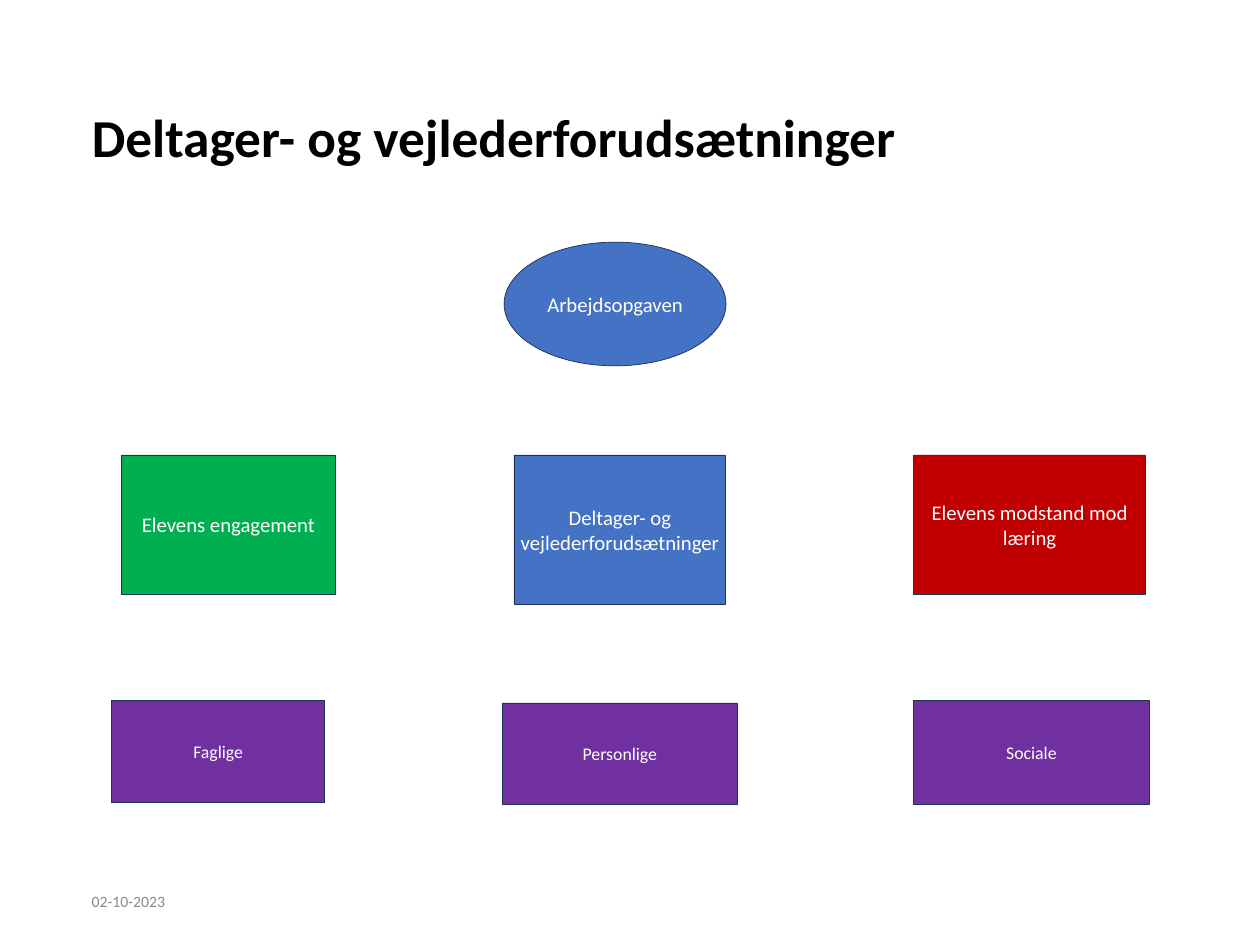
from pptx import Presentation
from pptx import util as u
from pptx.dml.color import RGBColor
from pptx.enum import shapes, text

WIDTH, HEIGHT = 23.62, 17.72
MARGIN = 1.62
# Left edges of the outer columns; the middle column is centred on its axis
LEFT, RIGHT = 2.28, 17.13
MIDDLE_AXIS = 11.62
# Top edges of the rows
TASK_ROW, PUPIL_ROW, SKILL_ROW = 4.54, 8.53, 13.14

BLUE, GREEN, RED, PURPLE = "4472C4", "00B050", "C00000", "7030A0"
OUTLINE, WHITE, BLACK, GREY = "1E3256", "FFFFFF", "000000", "898989"


def colour(hex_code):
    return RGBColor.from_string(hex_code)


def write(shape, words, size, hex_code, anchor, align, bold=False):
    frame = shape.text_frame
    frame.text = words
    frame.word_wrap = True
    frame.auto_size = text.MSO_AUTO_SIZE.NONE
    frame.vertical_anchor = anchor
    paragraph = frame.paragraphs[0]
    paragraph.alignment = align
    font = paragraph.font
    font.name, font.size, font.bold = "Calibri", u.Pt(size), bold
    font.color.rgb = colour(hex_code)
    return paragraph


def add_title(slide, words):
    title = slide.shapes.title
    title.left, title.top = u.Inches(MARGIN), u.Inches(2.03)
    title.width, title.height = u.Inches(WIDTH - 2 * MARGIN), u.Inches(1.59)
    paragraph = write(title, words, 72, BLACK, text.MSO_ANCHOR.TOP,
                      text.PP_ALIGN.LEFT, bold=True)
    paragraph.line_spacing = 0.9


def add_date(slide, words):
    box = slide.shapes.add_textbox(u.Inches(MARGIN), u.Inches(16.42),
                                   u.Inches(5.31), u.Inches(0.94))
    write(box, words, 21.3, GREY, text.MSO_ANCHOR.MIDDLE, text.PP_ALIGN.LEFT)


def add_node(slide, words, left, top, width, height, fill, size=28,
             kind=shapes.MSO_SHAPE.RECTANGLE):
    node = slide.shapes.add_shape(kind, u.Inches(left), u.Inches(top),
                                  u.Inches(width), u.Inches(height))
    node.shadow.inherit = False
    node.fill.solid()
    node.fill.fore_color.rgb = colour(fill)
    node.line.color.rgb = colour(OUTLINE)
    node.line.width = u.Pt(1)
    write(node, words, size, WHITE, text.MSO_ANCHOR.MIDDLE,
          text.PP_ALIGN.CENTER)


def centred(width):
    return MIDDLE_AXIS - width / 2


def main():
    presentation = Presentation()
    presentation.slide_width = u.Inches(WIDTH)
    presentation.slide_height = u.Inches(HEIGHT)
    slide = presentation.slides.add_slide(presentation.slide_layouts[5])

    add_title(slide, "Deltager- og vejlederforudsætninger")

    # The task
    add_node(slide, "Arbejdsopgaven", 9.45, TASK_ROW, 4.16, 2.32, BLUE,
             kind=shapes.MSO_SHAPE.OVAL)

    # Engagement, prerequisites and resistance
    add_node(slide, "Elevens engagement", LEFT, PUPIL_ROW, 4, 2.61, GREEN)
    add_node(slide, "Deltager- og vejlederforudsætninger", centred(3.97),
             PUPIL_ROW, 3.97, 2.8, BLUE)
    add_node(slide, "Elevens modstand mod læring", RIGHT, PUPIL_ROW,
             4.34, 2.61, RED)

    # The three kinds of prerequisite
    for words, left, top, width, height in (
            ("Faglige", 2.09, SKILL_ROW, 4, 1.91),
            ("Personlige", centred(4.41), SKILL_ROW + 0.04, 4.41, 1.91),
            ("Sociale", RIGHT, SKILL_ROW, 4.41, 1.95)):
        add_node(slide, words, left, top, width, height, PURPLE, size=24)

    add_date(slide, "02-10-2023")
    presentation.save("out.pptx")


if __name__ == "__main__":
    main()
